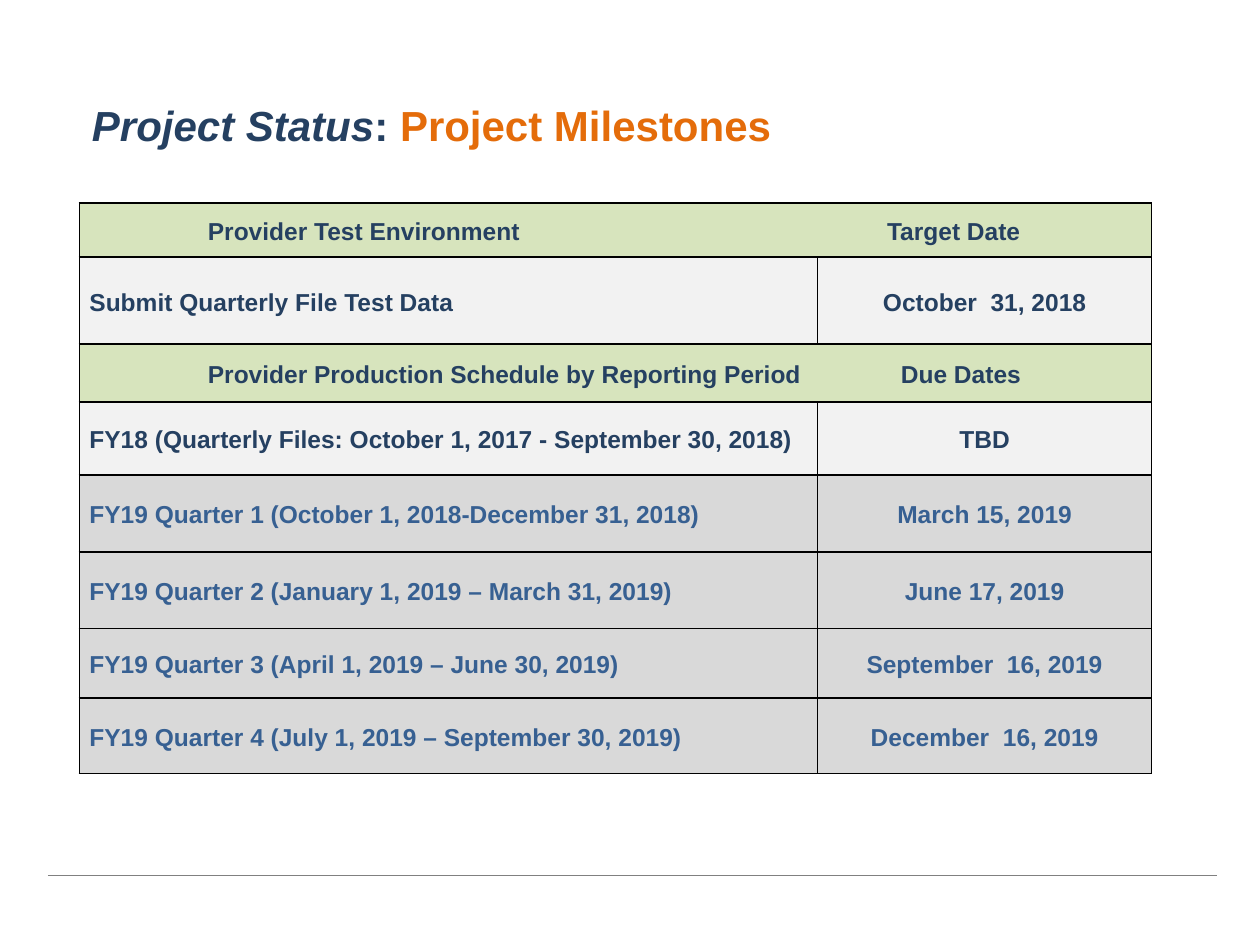
from lxml import etree
from pptx import Presentation
from pptx.dml.color import RGBColor
from pptx.enum.shapes import MSO_CONNECTOR
from pptx.enum.text import MSO_ANCHOR, PP_ALIGN
from pptx.oxml.ns import qn
from pptx.util import Inches, Pt

LEFT, CENTER = PP_ALIGN.LEFT, PP_ALIGN.CENTER
MIDDLE = MSO_ANCHOR.MIDDLE
STRAIGHT = MSO_CONNECTOR.STRAIGHT

FONT = "Arial"
COLORS = {
    "navy": "254061",
    "blue": "376092",
    "orange": "E46C0A",
    "green": "D7E4BD",
    "light": "F2F2F2",
    "gray": "D9D9D9",
    "border": "000000",
    "rule": "808080",
}
STYLES = {
    "header": ("green", "navy"),
    "current": ("light", "navy"),
    "planned": ("gray", "blue"),
}
TITLE = [
    ("Project Status", "navy", True),
    (": ", "navy", False),
    ("Project Milestones", "orange", False),
]
MILESTONES = [
    ("header", 0.43, "Provider Test Environment", "Target Date"),
    ("current", 0.69, "Submit Quarterly File Test Data", "October  31, 2018"),
    ("header", 0.46, "Provider Production Schedule by Reporting Period", "Due Dates"),
    ("current", 0.58, "FY18 (Quarterly Files: October 1, 2017 - September 30, 2018)", "TBD"),
    ("planned", 0.61, "FY19 Quarter 1 (October 1, 2018-December 31, 2018)", "March 15, 2019"),
    ("planned", 0.61, "FY19 Quarter 2 (January 1, 2019 – March 31, 2019)", "June 17, 2019"),
    ("planned", 0.55, "FY19 Quarter 3 (April 1, 2019 – June 30, 2019)", "September  16, 2019"),
    ("planned", 0.6, "FY19 Quarter 4 (July 1, 2019 – September 30, 2019)", "December  16, 2019"),
]
COLUMNS = [5.86, 2.65]
TABLE_LEFT, TABLE_TOP = 0.63, 1.61
CELL_INSET = 0.08
HEADER_INSET = 1.02
DATE_TABS = {"Target Date": 5.39, "Due Dates": 5.5}


def color(name):
    return RGBColor.from_string(COLORS[name])


def add_run(paragraph, text, size, color_name, italic=False):
    run = paragraph.add_run()
    run.text = text
    run.font.name = FONT
    run.font.size = Pt(size)
    run.font.bold = True
    run.font.italic = italic
    run.font.color.rgb = color(color_name)


def add_borders(cell):
    properties = cell._tc.get_or_add_tcPr()
    for side in ("a:lnL", "a:lnR", "a:lnT", "a:lnB"):
        line = etree.SubElement(properties, qn(side), w=str(Pt(1)))
        fill = etree.SubElement(line, qn("a:solidFill"))
        etree.SubElement(fill, qn("a:srgbClr"), val=COLORS["border"])


def add_tab(paragraph, position):
    tabs = etree.SubElement(paragraph._p.get_or_add_pPr(), qn("a:tabLst"))
    etree.SubElement(tabs, qn("a:tab"), pos=str(Inches(position)), algn="l")


def format_cell(cell, fill_name):
    add_borders(cell)
    cell.fill.solid()
    cell.fill.fore_color.rgb = color(fill_name)
    cell.vertical_anchor = MIDDLE
    cell.margin_left = cell.margin_right = Inches(CELL_INSET)
    cell.margin_top = cell.margin_bottom = 0


def write_cell(cell, text, color_name, alignment):
    paragraph = cell.text_frame.paragraphs[0]
    paragraph.alignment = alignment
    paragraph.line_spacing = 1.15
    add_run(paragraph, text, 14, color_name)
    return paragraph


def add_title(slide):
    title = slide.shapes.title
    title.left, title.top = Inches(0.63), Inches(0.64)
    title.width, title.height = Inches(8.79), Inches(0.7)
    title.text_frame.vertical_anchor = MIDDLE
    paragraph = title.text_frame.paragraphs[0]
    paragraph.alignment = LEFT
    for text, color_name, italic in TITLE:
        add_run(paragraph, text, 24, color_name, italic)


def add_milestones(slide):
    heights = [milestone[1] for milestone in MILESTONES]
    table = slide.shapes.add_table(
        len(MILESTONES), len(COLUMNS), Inches(TABLE_LEFT), Inches(TABLE_TOP),
        Inches(sum(COLUMNS)), Inches(sum(heights))).table
    table.first_row = table.horz_banding = False
    for column, width in zip(table.columns, COLUMNS):
        column.width = Inches(width)
    for row, (style, height, name, date) in zip(table.rows, MILESTONES):
        row.height = Inches(height)
        fill_name, text_color = STYLES[style]
        name_cell, date_cell = row.cells
        for cell in (name_cell, date_cell):
            format_cell(cell, fill_name)
        if style == "header":
            name_cell.merge(date_cell)
            name_cell.margin_left = Inches(HEADER_INSET)
            paragraph = write_cell(name_cell, f"{name}\t{date}", text_color, LEFT)
            add_tab(paragraph, DATE_TABS[date])
        else:
            write_cell(name_cell, name, text_color, LEFT)
            write_cell(date_cell, date, text_color, CENTER)


def add_footer_rule(slide):
    rule = slide.shapes.add_connector(
        STRAIGHT, Inches(0.38), Inches(6.95), Inches(9.66), Inches(6.95))
    rule.line.color.rgb = color("rule")
    rule.line.width = Pt(0.5)
    etree.SubElement(rule._element.spPr, qn("a:effectLst"))


def main():
    presentation = Presentation()
    presentation.slide_width, presentation.slide_height = Inches(10), Inches(7.5)
    slide = presentation.slides.add_slide(presentation.slide_layouts[5])
    add_footer_rule(slide)
    add_title(slide)
    add_milestones(slide)
    presentation.save("out.pptx")


if __name__ == "__main__":
    main()
